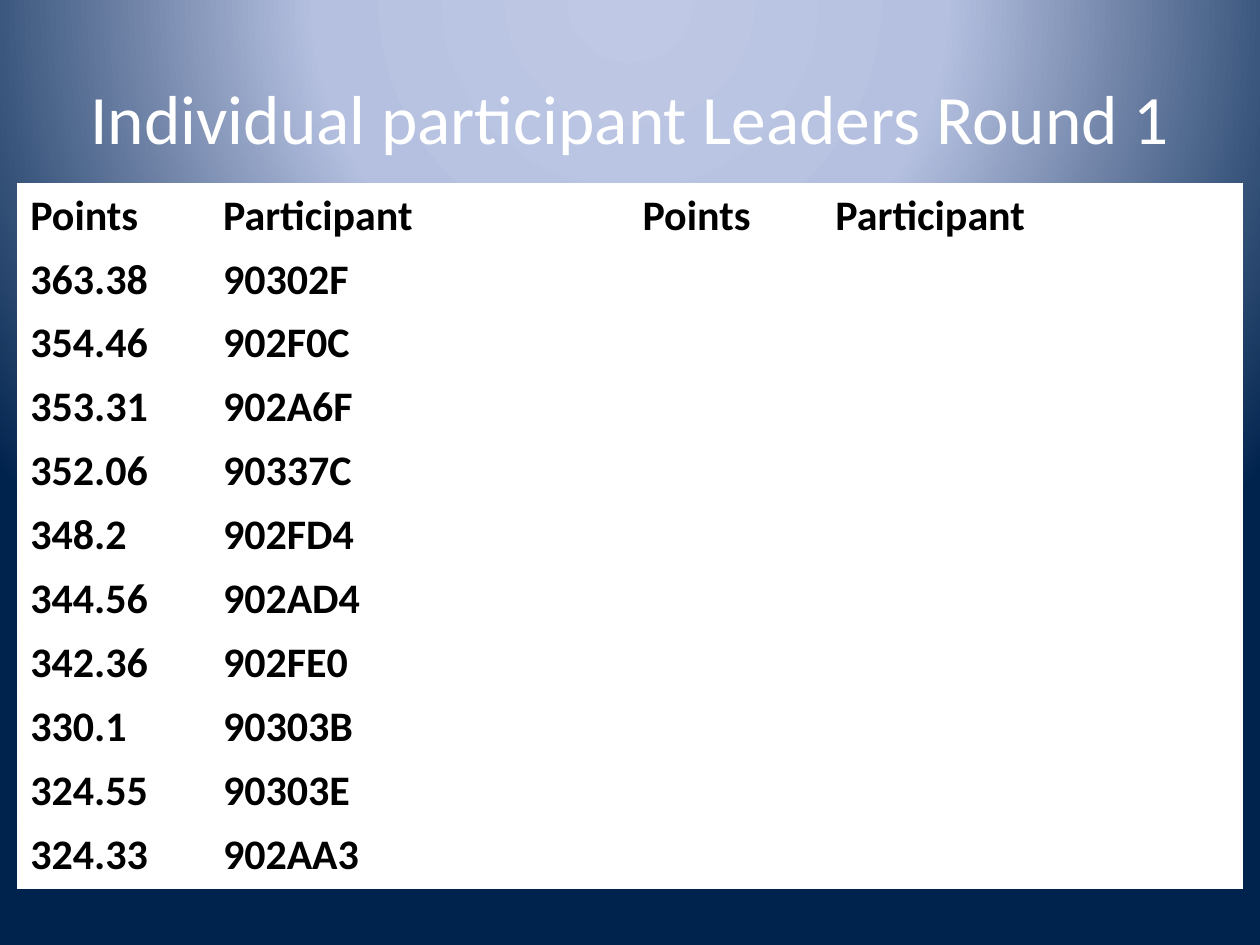
from dataclasses import dataclass

from lxml import etree
from pptx import Presentation
from pptx import util as u
from pptx.dml import color
from pptx.enum import text
from pptx.oxml import ns, parse_xml

FONT = "Calibri"
WHITE = "FFFFFF"
BLACK = "000000"
GRADIENT = ((0, "BFC9E5"), (40, "B5C0E0"), (100, "00234D"))
COLUMN_WIDTHS = (1.53, 3.33, 1.53, 3.33)
HEADERS = ("Points", "Participant") * 2
ROW_HEIGHT = 0.5


@dataclass
class Leader:
    points: str
    participant: str


LEADERS = [
    Leader("363.38", "90302F"),
    Leader("354.46", "902F0C"),
    Leader("353.31", "902A6F"),
    Leader("352.06", "90337C"),
    Leader("348.2", "902FD4"),
    Leader("344.56", "902AD4"),
    Leader("342.36", "902FE0"),
    Leader("330.1", "90303B"),
    Leader("324.55", "90303E"),
    Leader("324.33", "902AA3"),
]


def rgb(value: str) -> color.RGBColor:
    return color.RGBColor.from_string(value)


def add_run(p, words: str, size: float, fill: str, bold: bool = False) -> None:
    r = p.add_run()
    r.text = words
    r.font.name = FONT
    r.font.size = u.Pt(size)
    r.font.bold = bold
    r.font.color.rgb = rgb(fill)


def set_background(s) -> None:
    stops = "".join(
        f'<a:gs pos="{pos * 1000}"><a:srgbClr val="{fill}"/></a:gs>'
        for pos, fill in GRADIENT
    )
    bg = parse_xml(
        f'<p:bg {ns.nsdecls("p", "a")}><p:bgPr><a:gradFill rotWithShape="1">'
        f'<a:gsLst>{stops}</a:gsLst><a:path path="circle">'
        '<a:fillToRect l="50000" t="-80000" r="50000" b="180000"/></a:path>'
        "</a:gradFill><a:effectLst/></p:bgPr></p:bg>"
    )
    s.element.cSld.insert(0, bg)


def set_title(s, words: str) -> None:
    sp = s.shapes.title
    sp.left, sp.top = u.Inches(0.5), u.Inches(0.3)
    sp.width, sp.height = u.Inches(9), u.Inches(1.25)
    tf = sp.text_frame
    tf.word_wrap = True
    tf.vertical_anchor = text.MSO_ANCHOR.MIDDLE
    p = tf.paragraphs[0]
    p.alignment = text.PP_ALIGN.CENTER
    add_run(p, words, 39.6, WHITE)


def set_borders(cell, bottom: float) -> None:
    tc_pr = cell._tc.get_or_add_tcPr()
    for side, width in (("L", 1), ("R", 1), ("T", 1), ("B", bottom)):
        ln = etree.SubElement(tc_pr, ns.qn(f"a:ln{side}"), w=str(u.Pt(width)))
        fill = etree.SubElement(ln, ns.qn("a:solidFill"))
        etree.SubElement(fill, ns.qn("a:srgbClr"), val=WHITE)


def add_leader_table(s, leaders: list[Leader]) -> None:
    rows = [HEADERS] + [(x.points, x.participant, "", "") for x in leaders]
    table = s.shapes.add_table(
        len(rows), len(COLUMN_WIDTHS), u.Inches(0.14), u.Inches(1.46),
        u.Inches(sum(COLUMN_WIDTHS)), u.Inches(ROW_HEIGHT * len(rows)),
    ).table
    for column, width in zip(table.columns, COLUMN_WIDTHS):
        column.width = u.Inches(width)
    for i, row in enumerate(rows):
        for j, words in enumerate(row):
            cell = table.cell(i, j)
            set_borders(cell, 3 if i == len(rows) - 1 else 1)
            cell.fill.solid()
            cell.fill.fore_color.rgb = rgb(WHITE)
            if words:
                add_run(cell.text_frame.paragraphs[0], words, 24, BLACK, True)


def main() -> None:
    prs = Presentation()
    prs.slide_width, prs.slide_height = u.Inches(10), u.Inches(7.5)
    s = prs.slides.add_slide(prs.slide_layouts[5])
    set_background(s)
    set_title(s, "Individual participant Leaders Round 1")
    add_leader_table(s, LEADERS)
    prs.save("out.pptx")


if __name__ == "__main__":
    main()
